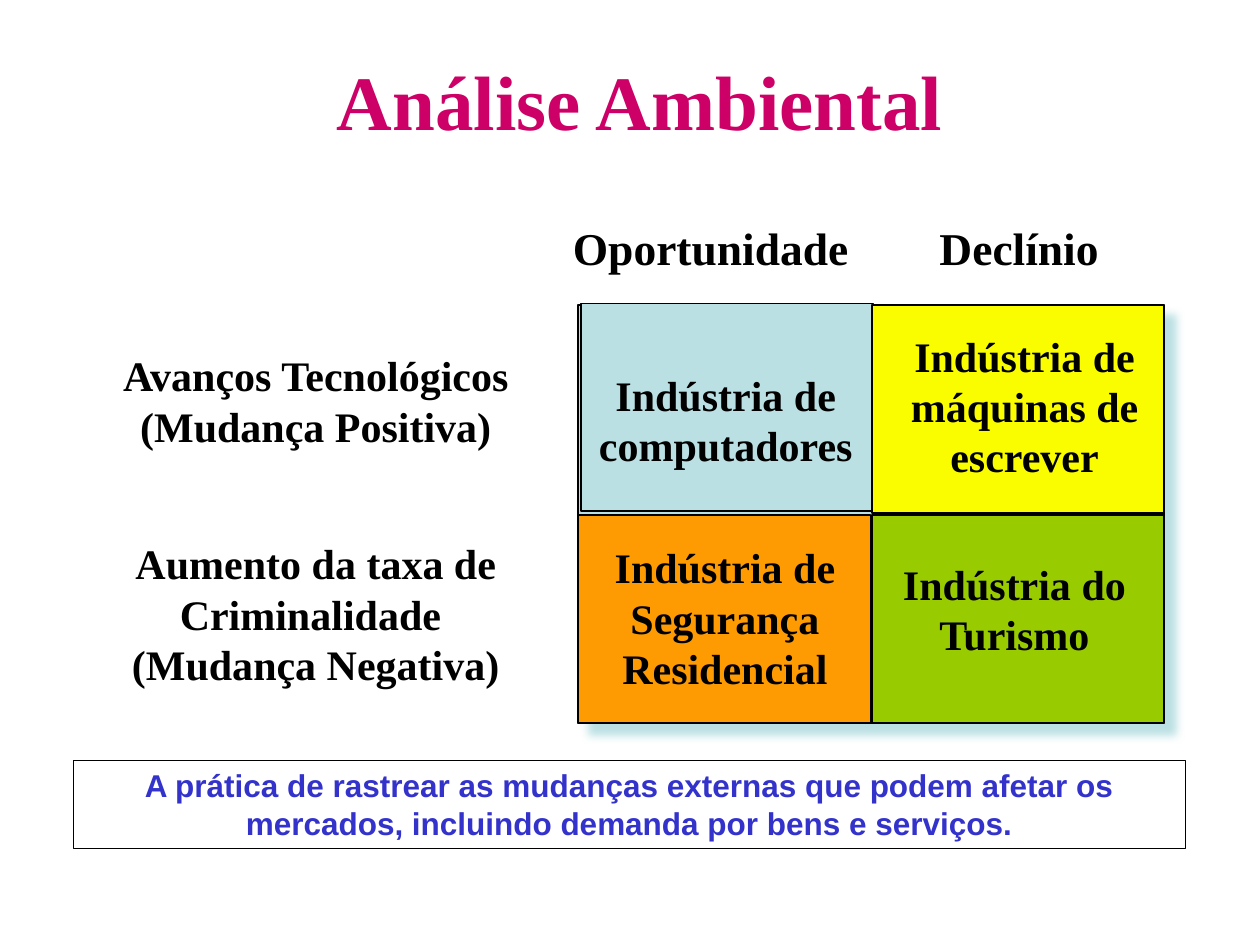
from collections import namedtuple

from lxml.etree import SubElement
from pptx import Presentation
from pptx.dml.color import RGBColor
from pptx.enum.shapes import MSO_SHAPE
from pptx.enum.text import MSO_ANCHOR, PP_ALIGN
from pptx.oxml.ns import qn
from pptx.util import Cm, Pt

COLORS = {
    "title": "CC0066",
    "ink": "000000",
    "note": "3333CC",
    "blue": "BBE0E3",
    "yellow": "FAFD00",
    "orange": "FE9B03",
    "green": "99CC00",
}
SERIF = "Times New Roman"
SANS = "Arial"

# All box lengths are centimetres
Box = namedtuple("Box", "left top width height")


def color(name):
    return RGBColor.from_string(COLORS[name])


def inside(box, left, top, width, height):
    """Return a box whose corner is measured from the corner of another."""
    return Box(box.left + left, box.top + top, width, height)


def write(shape, text, size, font=SERIF, ink="ink",
          align=PP_ALIGN.CENTER, anchor=MSO_ANCHOR.TOP):
    """Write lines of bold text, with line breaks inside one paragraph."""
    frame = shape.text_frame
    frame.word_wrap = True
    frame.vertical_anchor = anchor
    para = frame.paragraphs[0]
    para.alignment = align
    for number, line in enumerate(text.split("\n")):
        if number:
            para.add_line_break()
        span = para.add_run()
        span.text = line
        span.font.name = font
        span.font.size = Pt(size)
        span.font.bold = True
        span.font.color.rgb = color(ink)


def add_label(page, box, text, size=24, align=PP_ALIGN.CENTER):
    label = page.shapes.add_textbox(*map(Cm, box))
    write(label, text, size, align=align)


def add_rectangle(page, box, fill=None, line_width=1):
    rectangle = page.shapes.add_shape(MSO_SHAPE.RECTANGLE, *map(Cm, box))
    rectangle.shadow.inherit = False
    if fill:
        rectangle.fill.solid()
        rectangle.fill.fore_color.rgb = color(fill)
    else:
        rectangle.fill.background()
    rectangle.line.color.rgb = color("ink")
    rectangle.line.width = Pt(line_width)
    return rectangle


def add_shadow(shape, name):
    effects = shape._element.spPr.find(qn("a:effectLst"))
    shadow = SubElement(effects, qn("a:outerShdw"), blurRad=str(Pt(5)),
                        dist=str(Pt(8.5)), dir=str(45 * 60000),
                        algn="ctr", rotWithShape="0")
    SubElement(shadow, qn("a:srgbClr"), val=COLORS[name])


def place_title(page, box):
    title = page.shapes.title
    title.left, title.top, title.width, title.height = map(Cm, box)
    write(title, "Análise Ambiental", 44, ink="title",
          anchor=MSO_ANCHOR.MIDDLE)
    title.text_frame.word_wrap = False


def place_matrix(page, box):
    """Draw the shadowed frame, its four quadrants and their labels."""
    add_shadow(add_rectangle(page, box, "blue"), "blue")

    # Quadrants sit in the corners; the first is nudged off the frame
    width, height = 5.89, 4.19
    right, bottom = box.width - width, box.height - height
    for left, top, fill in (
        (0.05, -0.03, "blue"),
        (right, 0, "yellow"),
        (0, bottom, "orange"),
        (right, bottom, "green"),
    ):
        add_rectangle(page, inside(box, left, top, width, height), fill)

    # Quadrant labels
    for left, top, width, height, text in (
        (0.05, 1.17, 5.84, 2.29, "Indústria de computadores"),
        (6.25, 0.38, 5.49, 3.3, "Indústria de máquinas de escrever"),
        (0.2, 4.65, 5.51, 3.3, "Indústria de Segurança Residencial"),
        (6.25, 4.98, 5.08, 2.29, "Indústria do Turismo"),
    ):
        add_label(page, inside(box, left, top, width, height), text)

    # Column headings
    for left, width, text in ((-0.36, 6.55, "Oportunidade"),
                              (7.03, 3.81, "Declínio")):
        add_label(page, inside(box, left, -1.83, width, 1.35), text,
                  size=26, align=PP_ALIGN.LEFT)


def place_row_headings(page, box):
    for top, height, text in (
        (0, 2.29, "Avanços Tecnológicos (Mudança Positiva)"),
        (3.79, 3.3, "Aumento da taxa de Criminalidade \n(Mudança Negativa)"),
    ):
        add_label(page, inside(box, 0, top, box.width, height), text)


def place_definition(page, box):
    panel = add_rectangle(page, box, line_width=0.25)
    write(panel, "A prática de rastrear as mudanças externas que podem afetar "
          "os mercados, incluindo demanda por bens e serviços.",
          18, font=SANS, ink="note", anchor=MSO_ANCHOR.MIDDLE)


def main():
    deck = Presentation()
    deck.slide_width, deck.slide_height = Cm(25.4), Cm(19.05)
    page = deck.slides.add_slide(deck.slide_layouts[5])
    place_title(page, Box(6.5, 0.71, 12.8, 2.59))
    place_definition(page, Box(1.47, 15.32, 22.43, 1.78))
    place_matrix(page, Box(11.66, 6.15, 11.81, 8.43))
    place_row_headings(page, Box(1.5, 6.93, 9.73, 7.09))
    deck.save("out.pptx")


if __name__ == "__main__":
    main()
